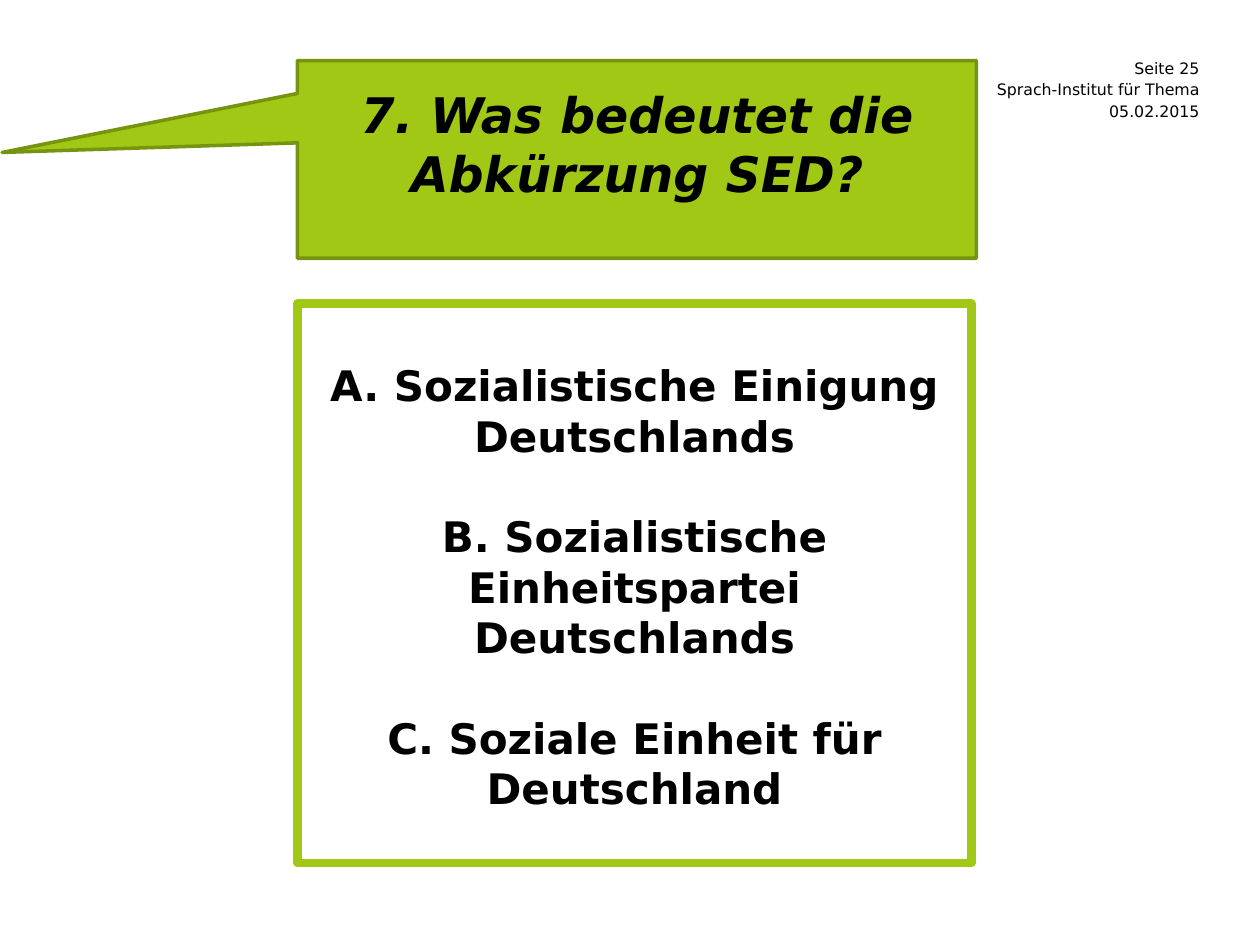
import pptx
import pptx.util
import pptx.dml.color
import pptx.enum.shapes
import pptx.enum.text
from lxml import etree

Pt = pptx.util.Pt
ALIGN = pptx.enum.text.PP_ALIGN
ANCHOR = pptx.enum.text.MSO_ANCHOR
FONT = "DejaVu Sans"
GREEN, DARK_GREEN, BLACK = "A0C814", "76940F", "000000"


def color(value):
    return pptx.dml.color.RGBColor.from_string(value)


def place(shape, left, top, width, height):
    shape.left, shape.top = Pt(left), Pt(top)
    shape.width, shape.height = Pt(width), Pt(height)


def set_frame(frame, anchor, left, top, right, bottom, wrap=True):
    frame.auto_size = pptx.enum.text.MSO_AUTO_SIZE.NONE
    frame.word_wrap = wrap
    frame.vertical_anchor = anchor
    frame.margin_left, frame.margin_top = Pt(left), Pt(top)
    frame.margin_right, frame.margin_bottom = Pt(right), Pt(bottom)


def format_para(para, align, size, bold=False, italic=False):
    para.alignment = align
    for span in para.runs:
        span.font.name, span.font.size = FONT, Pt(size)
        span.font.bold, span.font.italic = bold, italic
        span.font.color.rgb = color(BLACK)


def add_page_details(page, left, top, width, lines):
    pitch = 12.3
    for index, line in enumerate(lines):
        box = page.shapes.add_textbox(
            Pt(left), Pt(top + index * pitch), Pt(width), Pt(11.5))
        set_frame(box.text_frame, ANCHOR.MIDDLE, 0, 0, 0, 0, wrap=False)
        box.text_frame.text = line
        format_para(box.text_frame.paragraphs[0], ALIGN.RIGHT, 9)


def add_question(page, left, top, width, height, text):
    # Speech bubble, pointing left
    bubble = page.shapes.add_shape(
        pptx.enum.shapes.MSO_SHAPE.RECTANGULAR_CALLOUT,
        Pt(left), Pt(top), Pt(width), Pt(height))
    bubble.adjustments[0], bubble.adjustments[1] = -0.935, -0.035
    bubble.shadow.inherit = False
    bubble.fill.solid()
    bubble.fill.fore_color.rgb = color(GREEN)
    bubble.line.color.rgb = color(DARK_GREEN)
    bubble.line.width = Pt(2)

    # Question, raised a little above the middle of the bubble
    title = page.shapes.title
    place(title, left, top, width, height)
    set_frame(title.text_frame, ANCHOR.MIDDLE, 7.2, 3.6, 7.2, 22)
    title.text_frame.text = text
    format_para(title.text_frame.paragraphs[0], ALIGN.CENTER, 28, True, True)
    # The title lies in front of the bubble
    page.shapes._spTree.append(title._element)


def add_answers(page, left, top, width, height, answers):
    body = page.placeholders[1]
    place(body, left, top, width, height)
    body.line.color.rgb = color(GREEN)
    body.line.width = Pt(5)
    frame = body.text_frame
    set_frame(frame, ANCHOR.TOP, 7.2, 32, 7.2, 3.6)
    frame.text = "\n".join(answers)
    for index, para in enumerate(frame.paragraphs):
        para.space_before = Pt(28.8 if index else 0)
        properties = para._p.get_or_add_pPr()
        properties.set("marL", "0")
        properties.set("indent", "0")
        etree.SubElement(properties, pptx.oxml.ns.qn("a:buNone"))
        format_para(para, ALIGN.CENTER, 24, bold=True)


def main():
    deck = pptx.Presentation()
    deck.slide_width, deck.slide_height = Pt(720), Pt(540)
    page = deck.slides.add_slide(deck.slide_layouts[1])
    add_page_details(page, 527, 33.1, 158.4,
                     ["Seite 25", "Sprach-Institut für Thema", "05.02.2015"])
    add_question(page, 170, 34.6, 388, 113,
                 "7. Was bedeutet die Abkürzung SED?")
    add_answers(page, 170, 173.5, 385.2, 319.7, [
        "A. Sozialistische Einigung Deutschlands",
        "B. Sozialistische Einheitspartei Deutschlands",
        "C. Soziale Einheit für Deutschland",
    ])
    deck.save("out.pptx")


if __name__ == "__main__":
    main()
